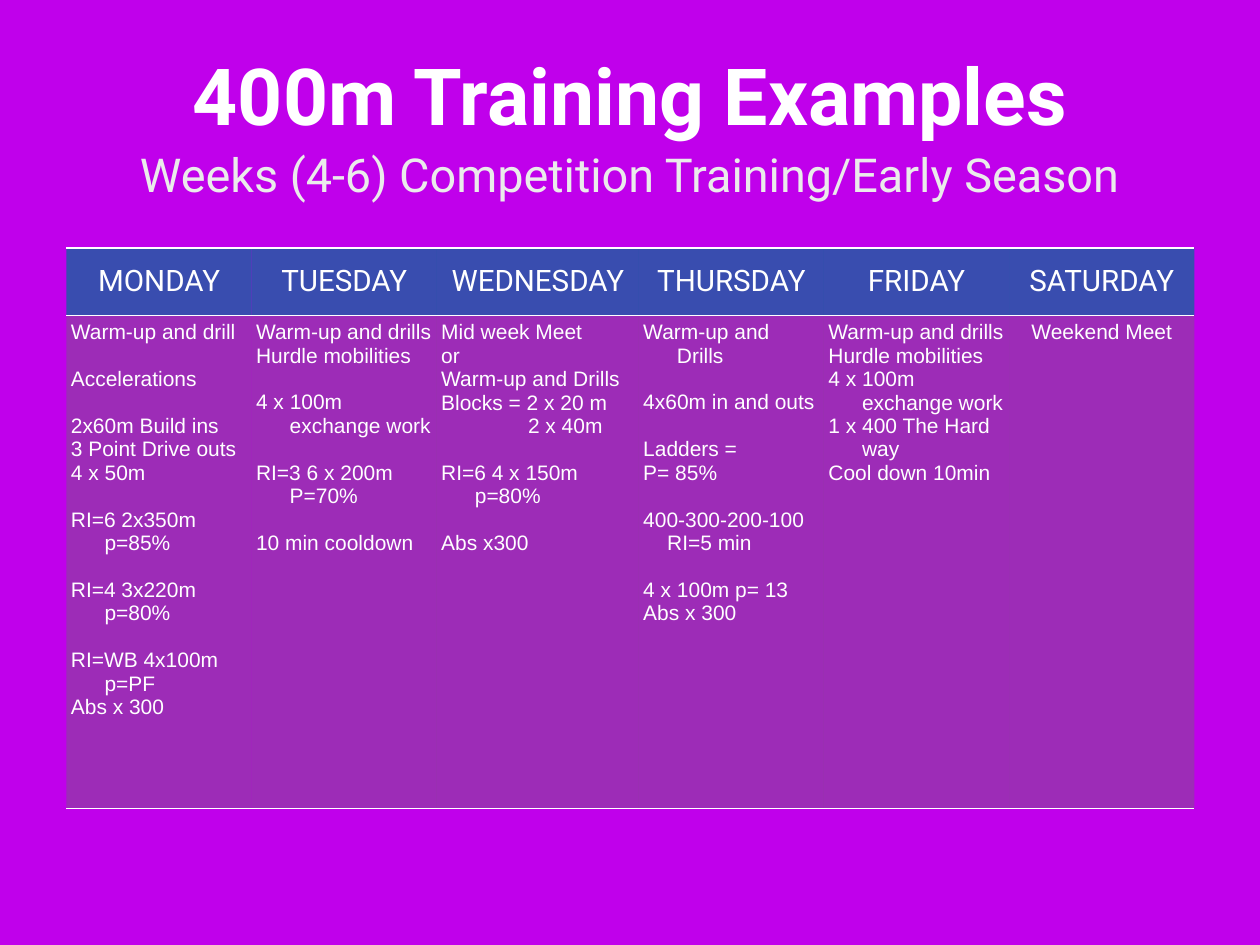
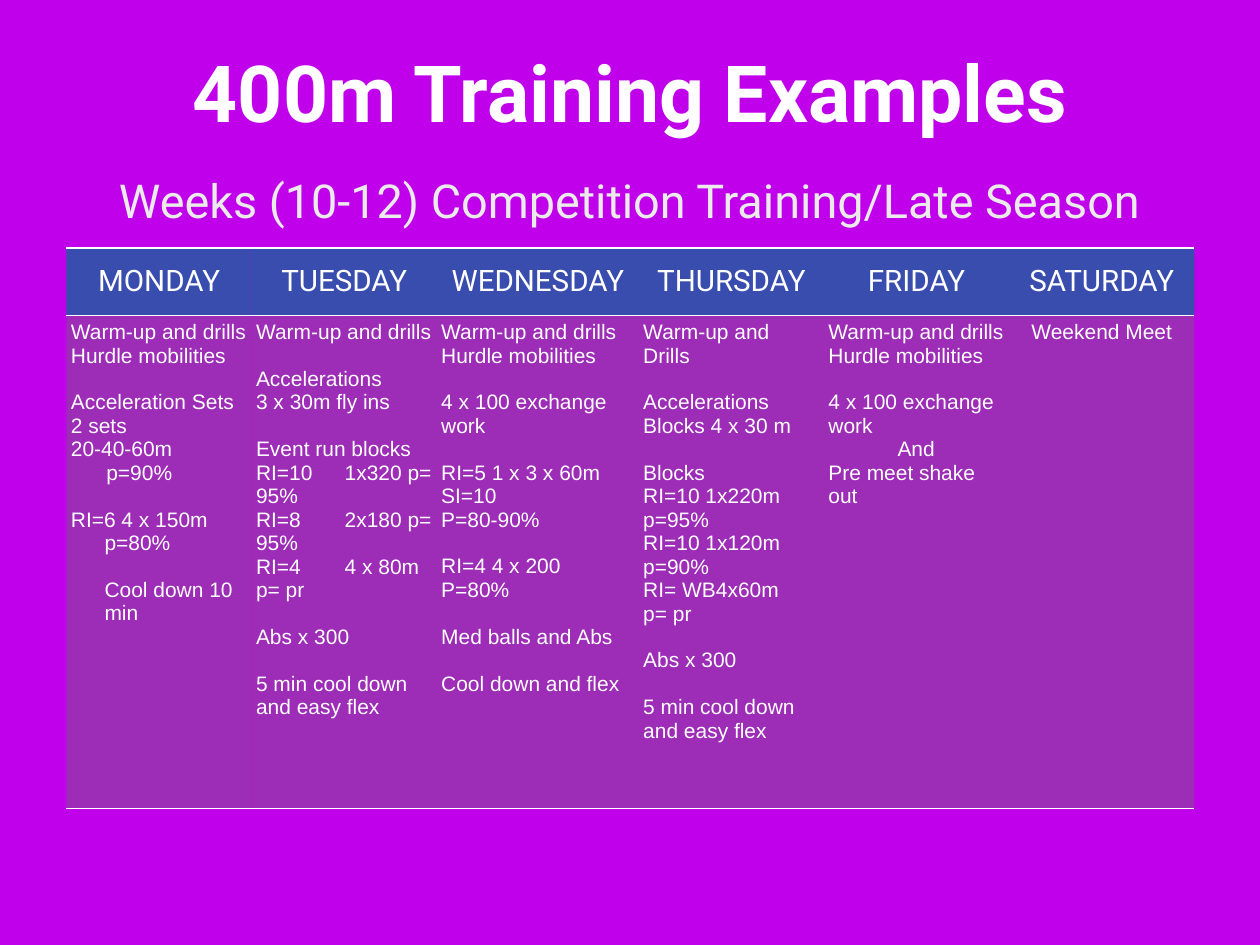
import pptx
import pptx.dml.color
import pptx.enum.text
import pptx.oxml
import pptx.oxml.ns
import pptx.util
from pptx.util import Inches

ALIGN = pptx.enum.text.PP_ALIGN
ANCHOR = pptx.enum.text.MSO_ANCHOR
HANG = 0.38
TAB = 0.76
COLUMNS = {"MONDAY": 2.09, "TUESDAY": 2.09, "WEDNESDAY": 2.28,
           "THURSDAY": 2.09, "FRIDAY": 2.09, "SATURDAY": 2.09}
ROWS = [0.76, 5.57]
TABLE_LEFT, TABLE_TOP = 0.75, 2.8
HEADER_FILL = ("1861A1", 80)
BODY_FILL = ("6D6D6D", 41)
BACKGROUND = "C000EB"
TITLE = "400m Training Examples"
TITLE_FONT = {"name": "Roboto", "size": 64, "bold": True, "color": "FFFFFF"}
SUBTITLE_FONT = {"name": "Roboto", "size": 38, "color": "EBEBEB"}
HEADER_FONT = {"name": "Roboto", "size": 24, "color": "FFFFFF"}
BODY_FONT = {"name": "Arial", "size": 17, "color": "FFFFFF"}
GROUP_GAP = 19
NO_TABLE_STYLE = "{2D5ABB26-0587-4C30-8999-92F81FD0307C}"

# Each day is a list of groups; a line is a text or (text, left margin, first-line indent).
WEEKS = [
    {
        "subtitle": "Weeks (4-6) Competition Training/Early Season",
        "title_box": (0.83, -0.11, 12.56, 2.35),
        "subtitle_box": (1.33, 1.6, 11.56, 0.73),
        "hang": HANG,
        "days": [
            [["Warm-up and drill"], ["Accelerations"],
             ["2x60m Build ins", "3 Point Drive outs", "4 x 50m"],
             ["RI=6 2x350m p=85%"], ["RI=4 3x220m p=80%"],
             ["RI=WB 4x100m p=PF", "Abs x 300"]],
            [["Warm-up and drills", "Hurdle mobilities"],
             ["4 x 100m exchange work"], ["RI=3 6 x 200m P=70%"],
             ["10 min cooldown"]],
            [["Mid week Meet", "or", "Warm-up and Drills",
              "Blocks = 2 x 20 m", ("2 x 40m", 0.98, 0)],
             ["RI=6 4 x 150m p=80%"], ["Abs x300"]],
            [["Warm-up and Drills"], ["4x60m in and outs"],
             ["Ladders =", "P= 85%"],
             ["400-300-200-100", ("RI=5 min", 0.27, 0)],
             ["4 x 100m p= 13", "Abs x 300"]],
            [["Warm-up and drills", "Hurdle mobilities",
              "4 x 100m exchange work", "1 x 400 The Hard way",
              "Cool down 10min"]],
            [["Weekend Meet"]],
        ],
    },
    {
        "subtitle": "Weeks (10-12) Competition Training/Late Season",
        "title_box": (0.83, -0.15, 12.56, 2.35),
        "subtitle_box": (1.11, 1.89, 12, 0.73),
        "hang": 0,
        "days": [
            [["Warm-up and drills", "Hurdle mobilities"],
             ["Acceleration Sets", "2 sets", "20-40-60m", ("p=90%", 0.4, 0)],
             [("RI=6 4 x 150m p=80%", HANG, -HANG)],
             [("Cool down 10 min", HANG, 0)]],
            [["Warm-up and drills"], ["Accelerations", "3 x 30m fly ins"],
             ["Event run blocks", "RI=10\t1x320 p= 95%", "RI=8\t2x180 p= 95%",
              "RI=4\t4 x 80m", "p= pr"],
             ["Abs x 300"], ["5 min cool down and easy flex"]],
            [["Warm-up and drills", "Hurdle mobilities"],
             ["4 x 100 exchange work"],
             ["RI=5 1 x 3 x 60m", "SI=10", "P=80-90%"],
             ["RI=4 4 x 200", "P=80%"],
             ["Med balls and Abs"], ["Cool down and flex"]],
            [["Warm-up and Drills"], ["Accelerations", "Blocks 4 x 30 m"],
             ["Blocks", "RI=10 1x220m p=95%", "RI=10 1x120m p=90%",
              "RI= WB4x60m", "p= pr"],
             ["Abs x 300"], ["5 min cool down and easy flex"]],
            [["Warm-up and drills", "Hurdle mobilities"],
             ["4 x 100 exchange work", ("And", 0.78, 0), "Pre meet shake out"]],
            [["Weekend Meet"]],
        ],
    },
]


def rgb(color):
    return pptx.dml.color.RGBColor.from_string(color)


def add_text(p, text, style, align):
    p.alignment = align
    r = p.add_run()
    r.text = text
    for key, value in style.items():
        if key == "color":
            r.font.color.rgb = rgb(value)
        else:
            setattr(r.font, key, pptx.util.Pt(value) if key == "size" else value)


def add_box(s, box, text, style, inset, wrap):
    tf = s.shapes.add_textbox(*map(Inches, box)).text_frame
    tf.word_wrap = wrap
    tf.vertical_anchor = ANCHOR.MIDDLE
    for side in ("left", "top", "right", "bottom"):
        setattr(tf, "margin_" + side, Inches(inset))
    add_text(tf.paragraphs[0], text, style, ALIGN.CENTER)


def set_indent(p, left, first, tab):
    """Set left margin and first-line indent, and optionally one tab stop, in inches."""
    pPr = p._p.get_or_add_pPr()
    pPr.set("marL", str(Inches(left)))
    pPr.set("indent", str(Inches(first)))
    if tab:
        ns = pptx.oxml.ns.nsdecls("a")
        pPr.append(pptx.oxml.parse_xml(
            f'<a:tabLst {ns}><a:tab pos="{Inches(tab)}" algn="l"/></a:tabLst>'))


def format_cell(cell, fill, anchor):
    """Give a cell a see-through fill, insets and white rules above and below."""
    cell.vertical_anchor = anchor
    for side, inset in {"left": 0.05, "right": 0.05, "top": 0.06, "bottom": 0.06}.items():
        setattr(cell, "margin_" + side, Inches(inset))
    color, opacity = fill
    cell.fill.solid()
    cell.fill.fore_color.rgb = rgb(color)
    ns = pptx.oxml.ns.nsdecls("a")
    tcPr = cell._tc.get_or_add_tcPr()
    tcPr.find(".//" + pptx.oxml.ns.qn("a:srgbClr")).append(
        pptx.oxml.parse_xml(f'<a:alpha {ns} val="{opacity * 1000}"/>'))
    for i, edge in enumerate(("lnT", "lnB")):
        tcPr.insert(i, pptx.oxml.parse_xml(
            f'<a:{edge} {ns} w="{pptx.util.Pt(1)}"><a:solidFill>'
            f'<a:srgbClr val="FFFFFF"/></a:solidFill></a:{edge}>'))


def fill_day(tf, groups, hang, align):
    p = tf.paragraphs[0]
    for g, group in enumerate(groups):
        for i, line in enumerate(group):
            if g or i:
                p = tf.add_paragraph()
            if g and i == 0:
                p.space_before = pptx.util.Pt(GROUP_GAP)
            text, left, first = (line, hang, -hang) if isinstance(line, str) else line
            set_indent(p, left, first, TAB if "\t" in text else None)
            add_text(p, text, BODY_FONT, align)


def add_schedule(s, week):
    widths = list(COLUMNS.values())
    size = (TABLE_LEFT, TABLE_TOP, sum(widths), sum(ROWS))
    table = s.shapes.add_table(2, len(widths), *map(Inches, size)).table
    table.first_row = table.horz_banding = False
    table._tbl.tblPr.find(pptx.oxml.ns.qn("a:tableStyleId")).text = NO_TABLE_STYLE
    for row, height in zip(table.rows, ROWS):
        row.height = Inches(height)
    for c, (day, width) in enumerate(COLUMNS.items()):
        table.columns[c].width = Inches(width)
        head, body = table.cell(0, c), table.cell(1, c)
        format_cell(head, HEADER_FILL, ANCHOR.MIDDLE)
        add_text(head.text_frame.paragraphs[0], day, HEADER_FONT, ALIGN.CENTER)
        format_cell(body, BODY_FILL, ANCHOR.TOP)
        align = ALIGN.CENTER if day == "SATURDAY" else ALIGN.LEFT
        fill_day(body.text_frame, week["days"][c], week["hang"], align)


def main():
    prs = pptx.Presentation()
    prs.slide_width, prs.slide_height = Inches(14.22), Inches(10.67)
    for week in WEEKS:
        s = prs.slides.add_slide(prs.slide_layouts[6])
        s.background.fill.solid()
        s.background.fill.fore_color.rgb = rgb(BACKGROUND)
        add_box(s, week["title_box"], TITLE, TITLE_FONT, 0, True)
        add_schedule(s, week)
        add_box(s, week["subtitle_box"], week["subtitle"], SUBTITLE_FONT, 0.06, False)
    prs.save("out.pptx")


if __name__ == "__main__":
    main()
